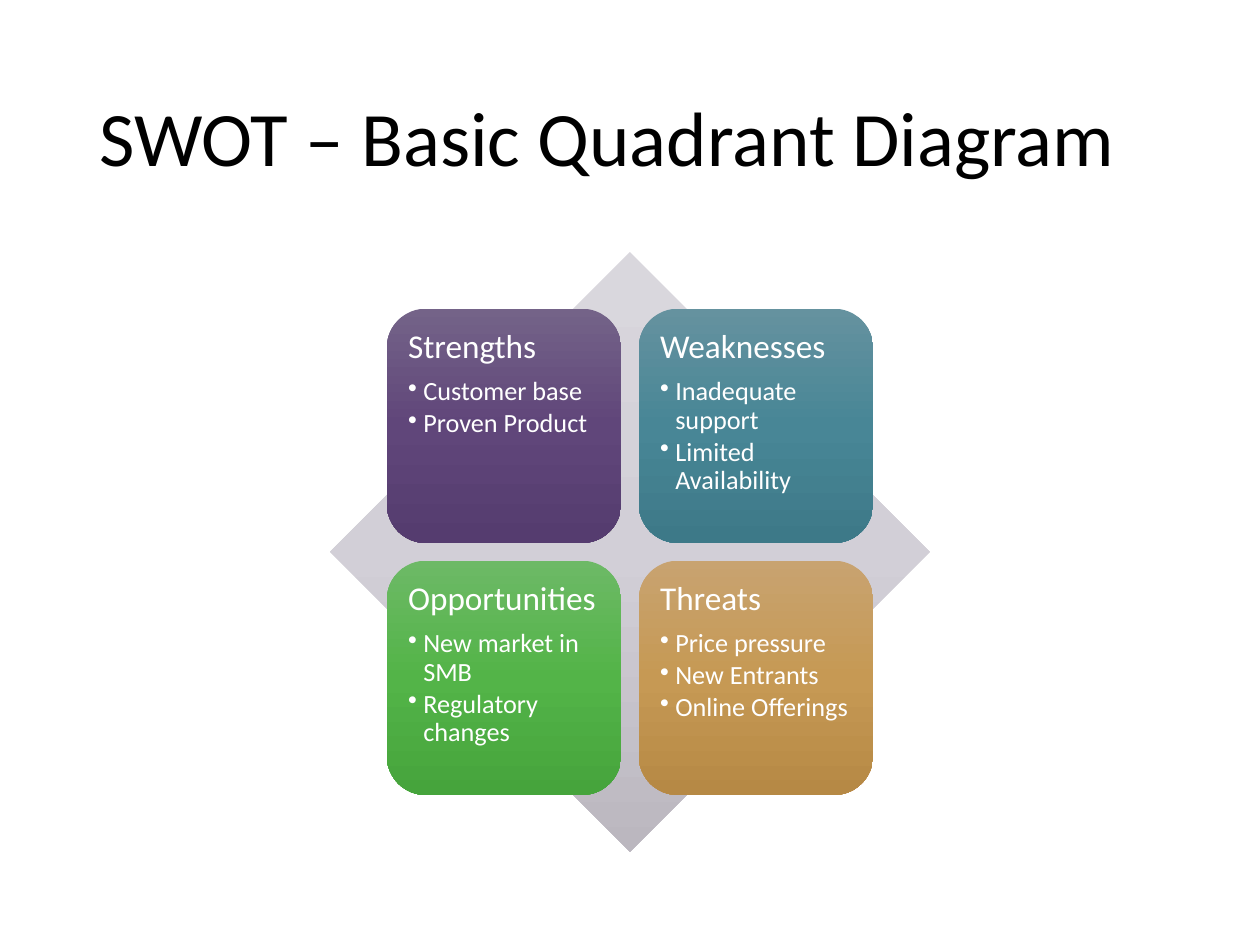
from copy import deepcopy

from lxml.etree import SubElement
from pptx import Presentation
from pptx.dml.color import RGBColor
from pptx.enum.shapes import MSO_SHAPE
from pptx.enum.text import MSO_ANCHOR, PP_ALIGN
from pptx.oxml.ns import qn
from pptx.util import Inches, Pt

TITLE = "SWOT – Basic Quadrant Diagram"
QUADRANTS = [
    ("Strengths", ["Customer base", "Proven Product"]),
    ("Weaknesses", ["Inadequate support", "Limited Availability"]),
    ("Opportunities", ["New market in SMB", "Regulatory changes"]),
    ("Threats", ["Price pressure", "New Entrants", "Online Offerings"]),
]
COLORS = {"title": "000000", "text": "FFFFFF"}
GRADIENTS = {
    "diamond": ("D9D7DD", "D2CFD7", "BBB7BF"),
    "Strengths": ("746388", "60467A", "553C6F"),
    "Weaknesses": ("65929F", "488696", "3D7988"),
    "Opportunities": ("6DB966", "53B448", "46A43C"),
    "Threats": ("C8A370", "C69954", "B68945"),
}
STYLES = {
    "title": {"size": 44, "color": "title", "after": 0},
    "heading": {"size": 19, "color": "text", "after": 7},
    "bullet": {"size": 15, "color": "text", "after": 2},
}
CENTER_X, CENTER_Y = 5, 4.38
DIAMOND_SIZE, CARD_SIZE, CARD_PITCH = 4.76, 1.86, 2
TEXT_OFFSET, TEXT_SIZE, TEXT_MARGIN = 0.09, 1.67, 0.08
BULLET_INDENT = 0.12


def add_gradient_shape(slide, kind, left, top, size, colors):
    shape = slide.shapes.add_shape(kind, *map(Inches, (left, top, size, size)))
    shape.shadow.inherit = False
    shape.line.fill.background()
    shape.fill.gradient()
    shape.fill.gradient_angle = 270
    stop_list = shape.element.spPr.find(qn("a:gradFill")).find(qn("a:gsLst"))
    stop_list.insert(1, deepcopy(stop_list[0]))
    for stop, position, color in zip(shape.fill.gradient_stops, (0, 0.5, 1), colors):
        stop.position = position
        stop.color.rgb = RGBColor.from_string(color)


def add_text_box(slide, box, margins, anchor):
    frame = slide.shapes.add_textbox(*map(Inches, box)).text_frame
    frame.word_wrap = True
    frame.vertical_anchor = anchor
    for side, margin in zip(("left", "top", "right", "bottom"), margins):
        setattr(frame, f"margin_{side}", Inches(margin))
    return frame


def write_paragraph(paragraph, text, style_name):
    style = STYLES[style_name]
    paragraph_format = {
        "alignment": PP_ALIGN.LEFT,
        "line_spacing": 0.9,
        "space_before": Pt(0),
        "space_after": Pt(style["after"]),
    }
    for name, value in paragraph_format.items():
        setattr(paragraph, name, value)
    run = paragraph.add_run()
    run.text = text
    for name, value in {"name": "Calibri", "size": Pt(style["size"])}.items():
        setattr(run.font, name, value)
    run.font.color.rgb = RGBColor.from_string(COLORS[style["color"]])


def add_bullet(paragraph):
    paragraph.level = 1
    properties = paragraph._p.get_or_add_pPr()
    properties.set("marL", str(Inches(BULLET_INDENT)))
    properties.set("indent", str(-Inches(BULLET_INDENT)))
    SubElement(properties, qn("a:buChar"), char="•")


def add_quadrant(slide, index, heading, points):
    row, column = divmod(index, 2)
    left = CENTER_X + (column - 0.5) * CARD_PITCH - CARD_SIZE / 2
    top = CENTER_Y + (row - 0.5) * CARD_PITCH - CARD_SIZE / 2
    add_gradient_shape(
        slide, MSO_SHAPE.ROUNDED_RECTANGLE, left, top, CARD_SIZE, GRADIENTS[heading]
    )
    box = (left + TEXT_OFFSET, top + TEXT_OFFSET, TEXT_SIZE, TEXT_SIZE)
    frame = add_text_box(slide, box, [TEXT_MARGIN] * 4, MSO_ANCHOR.TOP)
    write_paragraph(frame.paragraphs[0], heading, "heading")
    for point in points:
        paragraph = frame.add_paragraph()
        write_paragraph(paragraph, point, "bullet")
        add_bullet(paragraph)


def main():
    presentation = Presentation()
    presentation.slide_width = Inches(10)
    presentation.slide_height = Inches(7.5)
    slide = presentation.slides.add_slide(presentation.slide_layouts[6])

    title_frame = add_text_box(
        slide, (0.69, 0.4, 8.62, 1.45), (0.1, 0.05, 0.1, 0.05), MSO_ANCHOR.MIDDLE
    )
    write_paragraph(title_frame.paragraphs[0], TITLE, "title")

    add_gradient_shape(
        slide,
        MSO_SHAPE.DIAMOND,
        CENTER_X - DIAMOND_SIZE / 2,
        CENTER_Y - DIAMOND_SIZE / 2,
        DIAMOND_SIZE,
        GRADIENTS["diamond"],
    )
    for index, (heading, points) in enumerate(QUADRANTS):
        add_quadrant(slide, index, heading, points)

    presentation.save("out.pptx")


if __name__ == "__main__":
    main()
